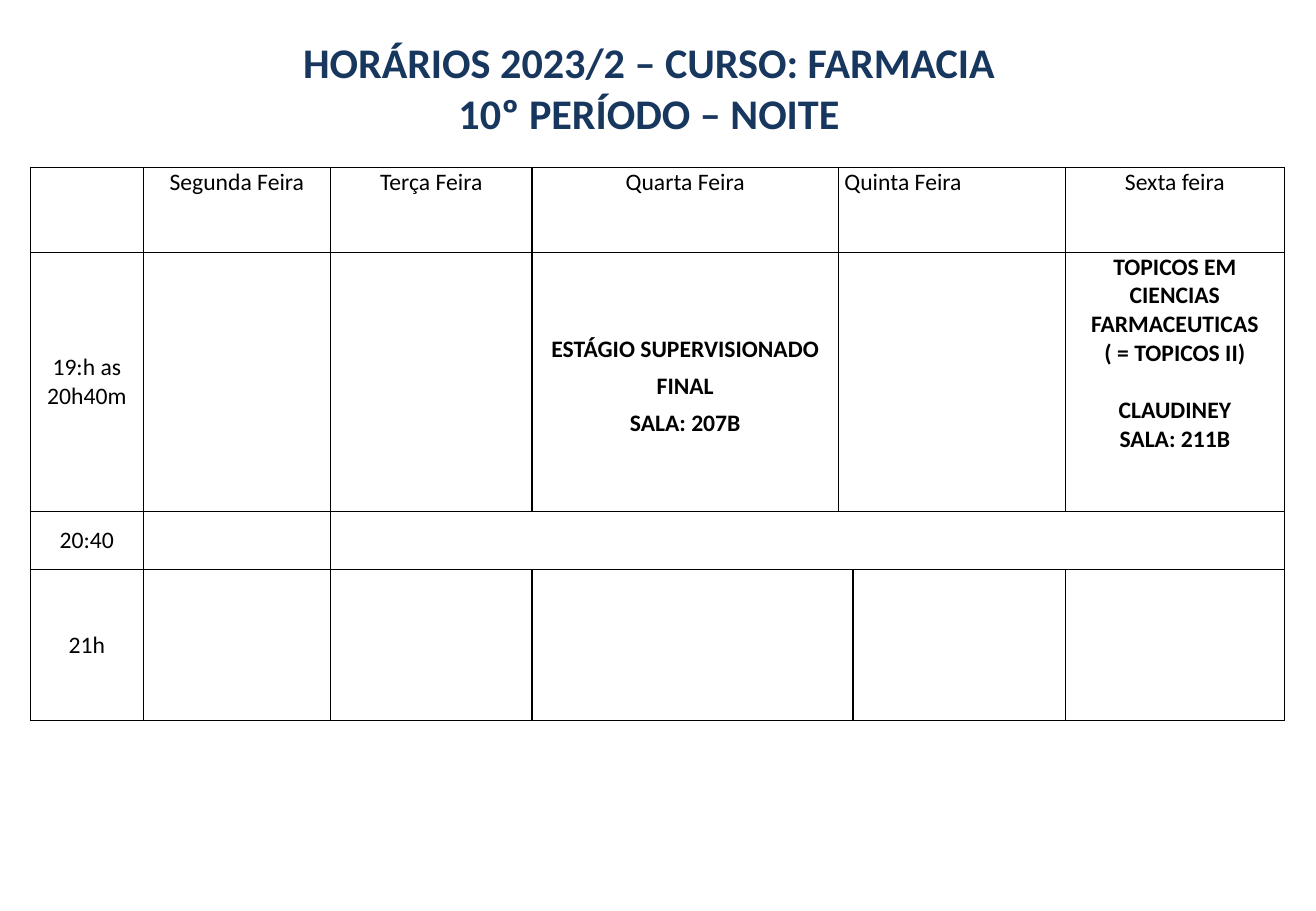
from copy import deepcopy

from lxml import etree
from pptx import Presentation
from pptx import util as u
from pptx.dml.color import RGBColor
from pptx.enum import text
from pptx.oxml.ns import qn

COLORS = {"title": "17375E", "ink": "000000"}
FONT = "Calibri"
TITLE = ["HORÁRIOS 2023/2 – CURSO: FARMACIA", "10º PERÍODO – NOITE"]
DAYS = ["Segunda Feira", "Terça Feira", "Quarta Feira", "Quinta Feira", "Sexta feira"]
DAY_COLUMNS = [1, 2, 3, 4, 6]
TIMES = ["19:h as 20h40m", "20:40", "21h"]
INTERNSHIP = ["ESTÁGIO SUPERVISIONADO FINAL", "SALA: 207B"]
TOPICS = ["TOPICOS EM CIENCIAS FARMACEUTICAS\v( = TOPICOS II)", "CLAUDINEY", "SALA: 211B"]
WIDTHS = [0.93, 1.54, 1.66, 2.52, 0.12, 1.75, 1.8]
HEIGHTS = [0.7, 2.13, 0.48, 1.24]
MERGES = [((0, 4), (0, 5)), ((1, 4), (1, 5)), ((2, 2), (2, 6)), ((3, 3), (3, 4))]
CENTER, LEFT = text.PP_ALIGN.CENTER, text.PP_ALIGN.LEFT
TOP, MIDDLE = text.MSO_ANCHOR.TOP, text.MSO_ANCHOR.MIDDLE


def write(frame, lines, size=14, color="ink", bold=False, align=CENTER, spacing=1.0, anchor=TOP):
    frame.word_wrap = True
    frame.vertical_anchor = anchor
    for index, line in enumerate(lines):
        para = frame.paragraphs[0] if index == 0 else frame.add_paragraph()
        para.text = line
        para.alignment = align
        para.line_spacing = spacing
        for span in para.runs:
            span.font.name = FONT
            span.font.size = u.Pt(size)
            span.font.bold = bold
            span.font.color.rgb = RGBColor.from_string(COLORS[color])
        for line_break in para._p.findall(qn("a:br")):
            line_break.append(deepcopy(para.runs[0]._r.rPr))


def outline(cell):
    properties = cell._tc.get_or_add_tcPr()
    for side in ("lnL", "lnR", "lnT", "lnB"):
        line = etree.SubElement(properties, qn(f"a:{side}"), w=str(u.Pt(1)))
        fill = etree.SubElement(line, qn("a:solidFill"))
        etree.SubElement(fill, qn("a:srgbClr"), val=COLORS["ink"])


deck = Presentation()
deck.slide_width, deck.slide_height = u.Inches(10.83), u.Inches(7.5)
page = deck.slides.add_slide(deck.slide_layouts[6])

box = page.shapes.add_textbox(u.Inches(0.3), u.Inches(0.25), u.Inches(10.08), u.Inches(0.94))
write(box.text_frame, TITLE, size=25, color="title", bold=True)

timetable = page.shapes.add_table(
    len(HEIGHTS), len(WIDTHS), u.Inches(0.25), u.Inches(1.38),
    u.Inches(sum(WIDTHS)), u.Inches(sum(HEIGHTS))).table
timetable.first_row = timetable.horz_banding = False
for column, width in zip(timetable.columns, WIDTHS):
    column.width = u.Inches(width)
for row, height in zip(timetable.rows, HEIGHTS):
    row.height = u.Inches(height)
for cell in timetable.iter_cells():
    cell.margin_left = cell.margin_right = u.Inches(0.05)
    cell.margin_top = cell.margin_bottom = 0
    outline(cell)
    cell.fill.background()
for start, end in MERGES:
    timetable.cell(*start).merge(timetable.cell(*end))


def fill_cell(row, column, lines, anchor=TOP, **style):
    cell = timetable.cell(row, column)
    write(cell.text_frame, lines, **style)
    cell.vertical_anchor = anchor
    return cell


for column, day in zip(DAY_COLUMNS, DAYS):
    fill_cell(0, column, [day], align=LEFT if day == "Quinta Feira" else CENTER)
for row, time in enumerate(TIMES, start=1):
    fill_cell(row, 0, [time], anchor=MIDDLE)
fill_cell(1, 3, INTERNSHIP, anchor=MIDDLE, bold=True, spacing=1.3)
topics = fill_cell(1, 6, TOPICS, bold=True)
topics.text_frame.paragraphs[1].space_before = u.Pt(17)

deck.save("out.pptx")
